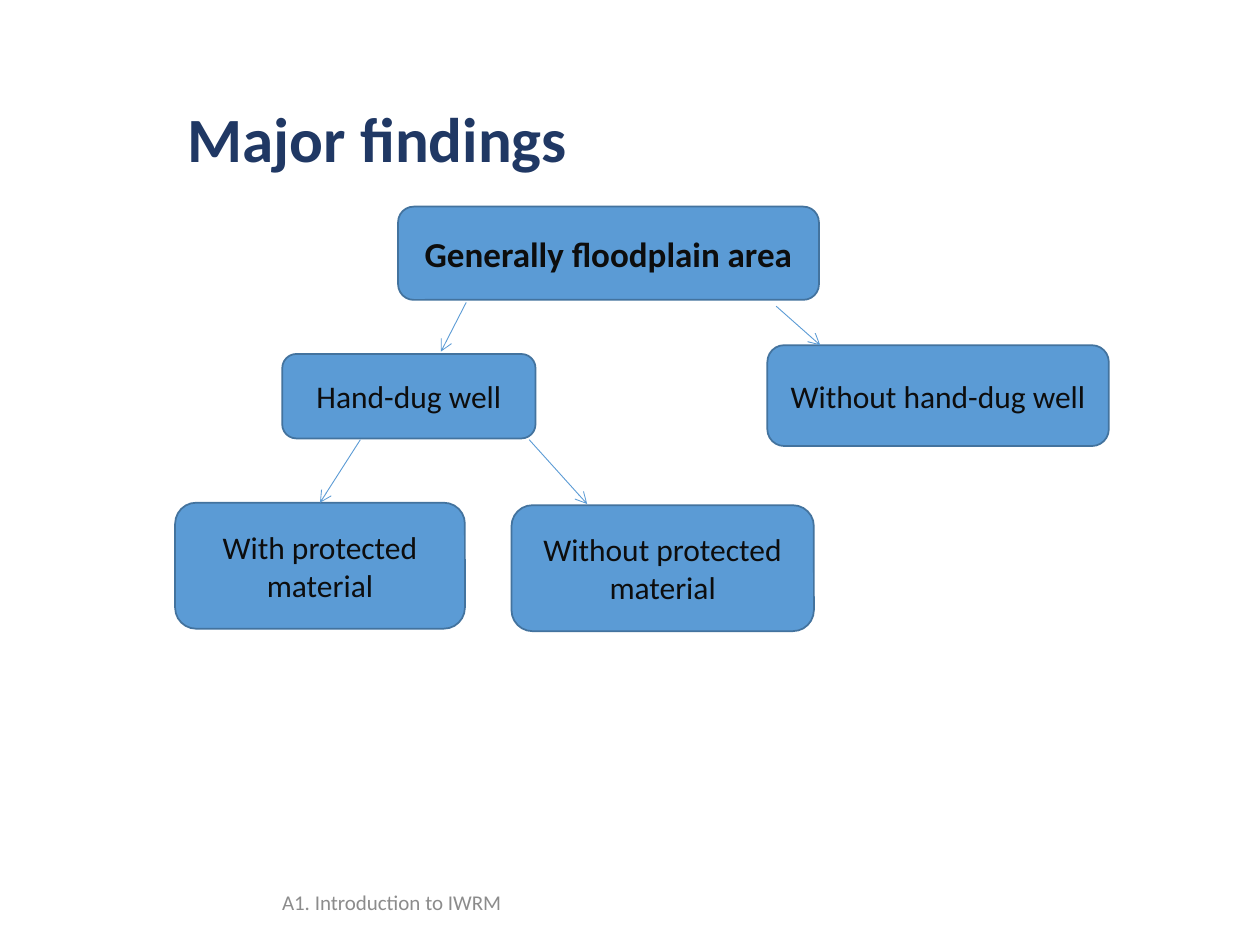
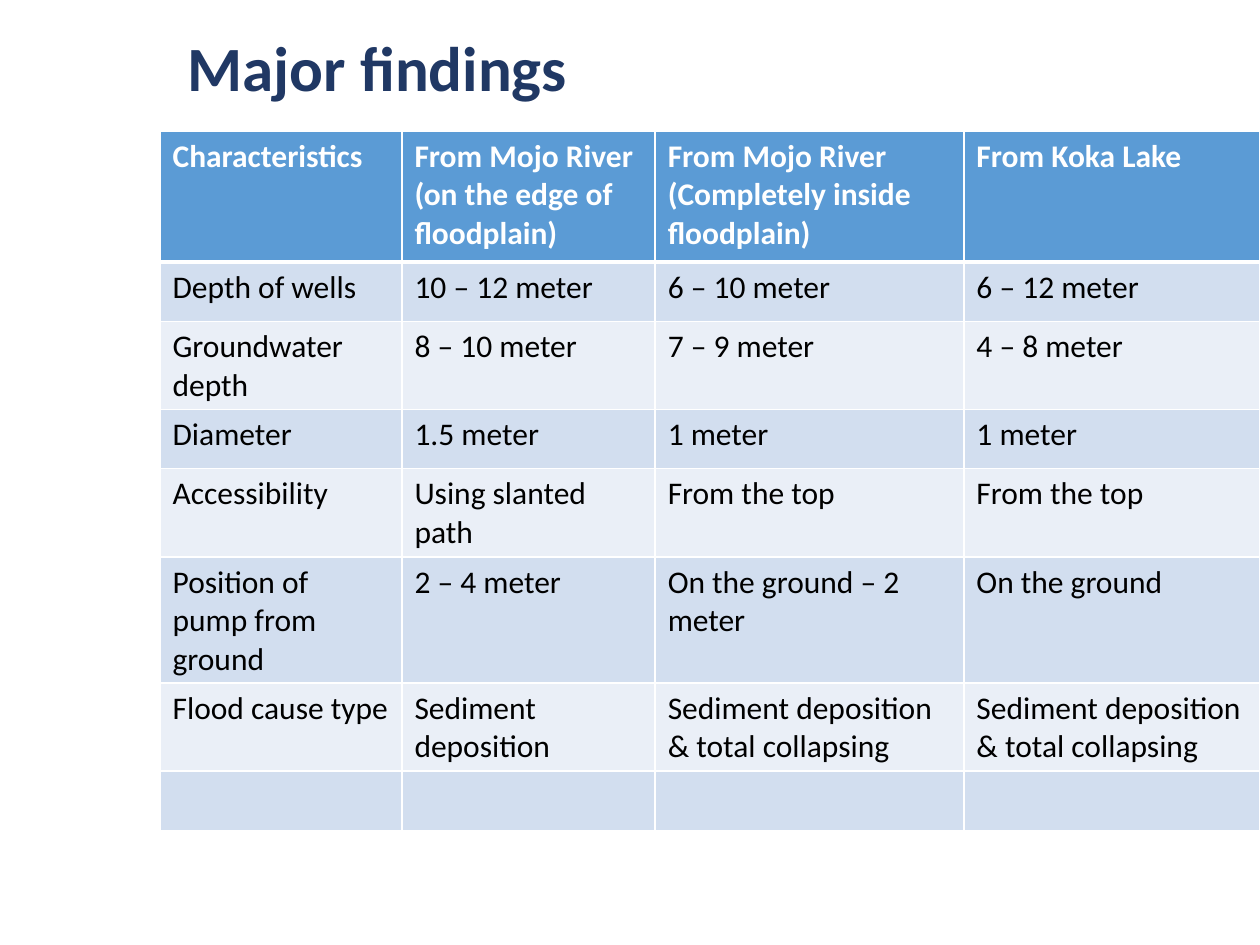
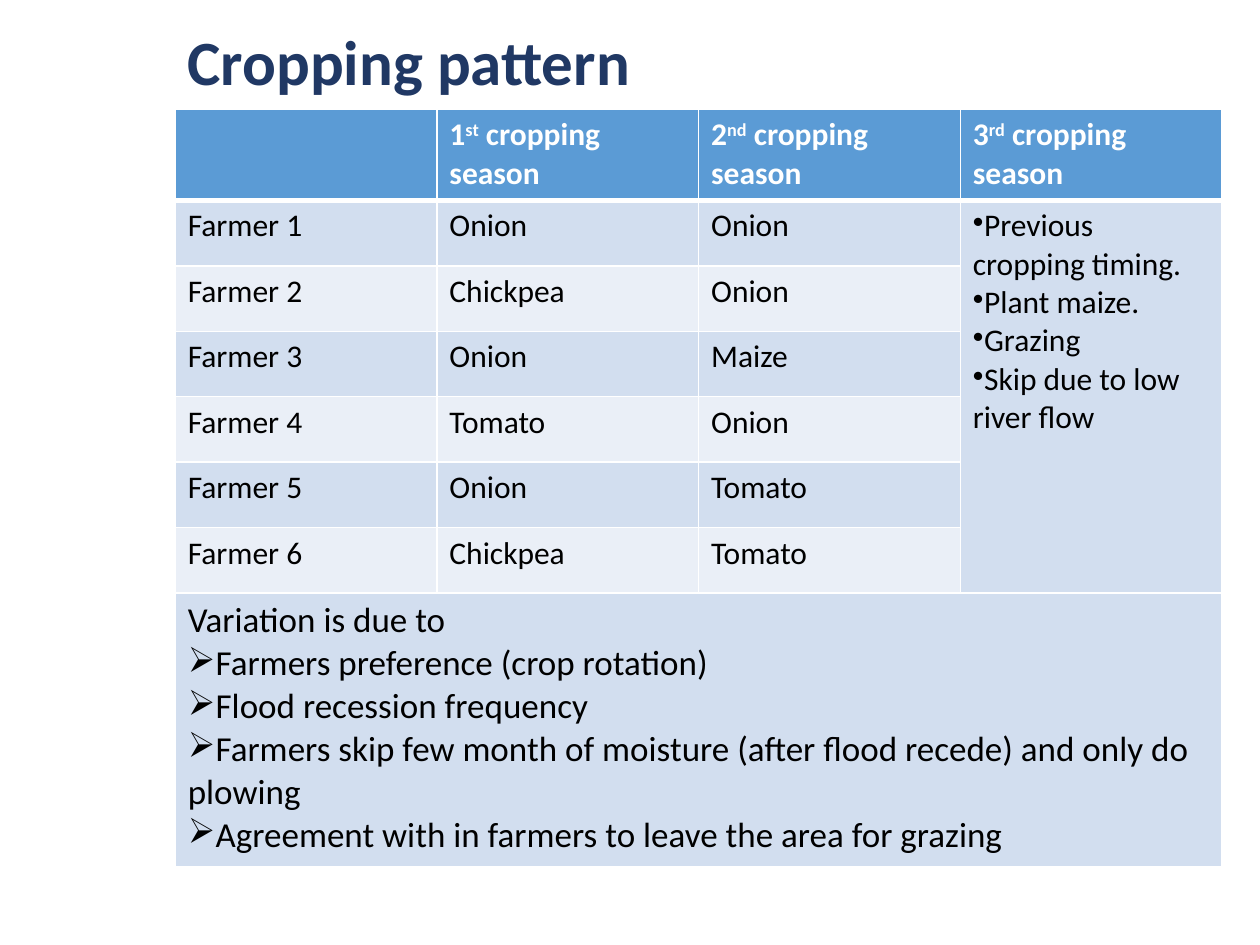
import pptx
import pptx.dml.color
import pptx.enum.shapes
import pptx.enum.text
import pptx.oxml
import pptx.oxml.ns
import pptx.util
from dataclasses import dataclass
from lxml import etree

Inches = pptx.util.Inches
Pt = pptx.util.Pt


@dataclass(frozen=True)
class Theme:
    font: str = "Calibri"
    title: str = "203864"
    accent: str = "5B9BD5"
    outline: str = "43739E"
    label: str = "0D0D0D"
    footer: str = "8C8C8C"
    text: str = "000000"
    white: str = "FFFFFF"
    bands: tuple = ("D2DEEF", "EAEFF7")
    title_size: int = 36
    large_size: int = 20
    body_size: int = 18
    footer_size: int = 12
    grid_line: int = 1
    header_line: int = 3


THEME = Theme()
LEFT, WIDTH = 1.39, 8.31
BULLETS = "•➢"

# Content: label -> (left, top, width, height)
ROOT = "Generally floodplain area"
FINDINGS = {
    ROOT: (3.16, 1.64, 3.34, 0.74),
    "Hand-dug well": (2.24, 2.81, 2.01, 0.67),
    "Without hand-dug well": (6.09, 2.74, 2.71, 0.8),
    "With protected material": (LEFT, 3.99, 2.3, 1),
    "Without protected material": (4.06, 4.01, 2.4, 1),
}
# Start, end, and the box whose top middle the arrow joins
ARROWS = [
    ((3.7, 2.4), (3.5, 2.79), None),
    ((6.16, 2.43), (6.51, 2.74), None),
    ((2.86, 3.49), (2.54, 3.99), "With protected material"),
    ((4.2, 3.49), (4.66, 4), None),
]
FOOTER = "A1. Introduction to IWRM"

WELLS = [
    ["Characteristics", "From Mojo River\n(on the edge of floodplain)",
     "From Mojo River\n(Completely inside floodplain)", "From Koka Lake"],
    ["Depth of wells", "10 – 12 meter", "6 – 10 meter", "6 – 12 meter"],
    ["Groundwater depth", "8 – 10 meter", "7 – 9 meter", "4 – 8 meter"],
    ["Diameter", "1.5 meter", "1 meter", "1 meter"],
    ["Accessibility", "Using slanted path", "From the top", "From the top"],
    ["Position of pump from ground", "2 – 4 meter", "On the ground – 2 meter",
     "On the ground"],
    ["Flood cause type", "Sediment deposition",
     "Sediment deposition & total collapsing",
     "Sediment deposition & total collapsing"],
    ["", "", "", ""],
]

# Text between carets is superscript
THIRD_SEASON = ("•Previous cropping timing.\n•Plant maize.\n•Grazing\n"
                "•Skip due to low river flow")
VARIATION = ("Variation is due to\n"
             "➢Farmers preference (crop rotation)\n"
             "➢Flood recession frequency\n"
             "➢Farmers skip few month of moisture (after flood recede) "
             "and only do plowing\n"
             "➢Agreement with in farmers to leave the area for grazing")
CROPS = [
    ["", "1^st^ cropping season", "2^nd^ cropping season",
     "3^rd^ cropping season"],
    ["Farmer 1", "Onion", "Onion", THIRD_SEASON],
    ["Farmer 2", "Chickpea", "Onion", ""],
    ["Farmer 3", "Onion", "Maize", ""],
    ["Farmer 4", "Tomato", "Onion", ""],
    ["Farmer 5", "Onion", "Tomato", ""],
    ["Farmer 6", "Chickpea", "Tomato", ""],
    [VARIATION, "", "", ""],
]
# Merged areas: first and last (row, column)
CROP_MERGES = [((1, 3), (6, 3)), ((7, 0), (7, 3))]


def rgb(color):
    return pptx.dml.color.RGBColor.from_string(color)


def inches(values):
    return [Inches(value) for value in values]


def style(font, size, color, bold=False):
    font.name, font.size, font.bold = THEME.font, Pt(size), bold
    font.color.rgb = rgb(color)


def add_text(page, area, text, size, color, bold=False):
    box = page.shapes.add_textbox(*inches(area))
    frame = box.text_frame
    frame.word_wrap = True
    frame.vertical_anchor = pptx.enum.text.MSO_ANCHOR.MIDDLE
    frame.text = text
    style(frame.paragraphs[0].runs[0].font, size, color, bold)
    return box


def add_page(deck, title, top, height):
    page = deck.slides.add_slide(deck.slide_layouts[6])
    box = add_text(page, (LEFT, top, WIDTH, height), title,
                   THEME.title_size, THEME.title, True)
    box.text_frame.paragraphs[0].line_spacing = 0.9
    return page


def add_node(page, label, area):
    box = page.shapes.add_shape(
        pptx.enum.shapes.MSO_SHAPE.ROUNDED_RECTANGLE, *inches(area))
    box.shadow.inherit = False
    box.fill.solid()
    box.fill.fore_color.rgb = rgb(THEME.accent)
    box.line.color.rgb = rgb(THEME.outline)
    box.line.width = Pt(1)
    frame = box.text_frame
    frame.word_wrap = True
    frame.vertical_anchor = pptx.enum.text.MSO_ANCHOR.MIDDLE
    frame.text = label
    para = frame.paragraphs[0]
    para.alignment = pptx.enum.text.PP_ALIGN.CENTER
    is_root = label == ROOT
    size = THEME.large_size if is_root else THEME.body_size
    style(para.runs[0].font, size, THEME.label, is_root)
    return box


def add_arrow(page, start, end, target):
    arrow = page.shapes.add_connector(
        pptx.enum.shapes.MSO_CONNECTOR.STRAIGHT, *inches(start + end))
    if target is not None:
        arrow.end_connect(target, 0)
    arrow.line.color.rgb = rgb(THEME.accent)
    arrow.line.width = Pt(0.5)
    tail = etree.SubElement(arrow.line._get_or_add_ln(),
                            pptx.oxml.ns.qn("a:tailEnd"))
    tail.set("type", "arrow")
    etree.SubElement(arrow._element.spPr, pptx.oxml.ns.qn("a:effectLst"))


def set_bullet(para, symbol):
    properties = para._p.get_or_add_pPr()
    properties.set("marL", "0")
    properties.set("indent", "0")
    bullet = etree.SubElement(properties, pptx.oxml.ns.qn("a:buChar"))
    bullet.set("char", symbol)


def fill_text(frame, text, size, color, bold):
    for index, line in enumerate(text.split("\n")):
        para = frame.add_paragraph() if index else frame.paragraphs[0]
        if line and line[0] in BULLETS:
            set_bullet(para, line[0])
            line = line[1:]
        for part, piece in enumerate(line.split("^")):
            if not piece:
                continue
            span = para.add_run()
            span.text = piece
            style(span.font, size, color, bold)
            if part % 2:
                span.font._element.set("baseline", "30000")


def set_borders(cell, top, bottom):
    widths = {"L": THEME.grid_line, "R": THEME.grid_line, "T": top, "B": bottom}
    properties = cell._tc.get_or_add_tcPr()
    for index, (side, width) in enumerate(widths.items()):
        properties.insert(index, pptx.oxml.parse_xml(
            f'<a:ln{side} {pptx.oxml.ns.nsdecls("a")} w="{Pt(width)}">'
            f'<a:solidFill><a:srgbClr val="{THEME.white}"/></a:solidFill>'
            f'</a:ln{side}>'))


def add_grid(page, left, top, columns, heights, rows, merges=()):
    area = inches((left, top, sum(columns), sum(heights)))
    table = page.shapes.add_table(len(rows), len(columns), *area).table
    table.first_row = table.horz_banding = False
    for column, width in zip(table.columns, columns):
        column.width = Inches(width)
    for row, height in zip(table.rows, heights):
        row.height = Inches(height)
    for first, last in merges:
        table.cell(*first).merge(table.cell(*last))

    for y, row in enumerate(rows):
        header = y == 0
        fill = THEME.accent if header else THEME.bands[(y - 1) % 2]
        color = THEME.white if header else THEME.text
        for x, text in enumerate(row):
            cell = table.cell(y, x)
            size = THEME.large_size if text == VARIATION else THEME.body_size
            cell.fill.solid()
            cell.fill.fore_color.rgb = rgb(fill)
            set_borders(cell,
                        THEME.header_line if y == 1 else THEME.grid_line,
                        THEME.header_line if header else THEME.grid_line)
            fill_text(cell.text_frame, text, size, color, header)


def main():
    deck = pptx.Presentation()
    deck.slide_width, deck.slide_height = Inches(10), Inches(7.5)

    # Tree of findings
    page = add_page(deck, "Major findings", 0.4, 1.45)
    add_text(page, (2.14, 6.96, 2.76, 0.4), FOOTER,
             THEME.footer_size, THEME.footer)
    nodes = {label: add_node(page, label, area)
             for label, area in FINDINGS.items()}
    for start, end, target in ARROWS:
        add_arrow(page, start, end, nodes.get(target))

    # Well characteristics
    page = add_page(deck, "Major findings", 0, 1.13)
    add_grid(page, 1.27, 1.04, [1.92, 2.01, 2.45, 2.35],
             [1.04, 0.47, 0.69] + [0.47] * 5, WELLS)

    # Crops by season
    page = add_page(deck, "Cropping pattern", 0, 1.04)
    add_grid(page, LEFT, 0.87, [WIDTH / 4] * 4,
             [0.72] + [0.52] * 6 + [2.17], CROPS, CROP_MERGES)

    deck.save("out.pptx")


if __name__ == "__main__":
    main()
